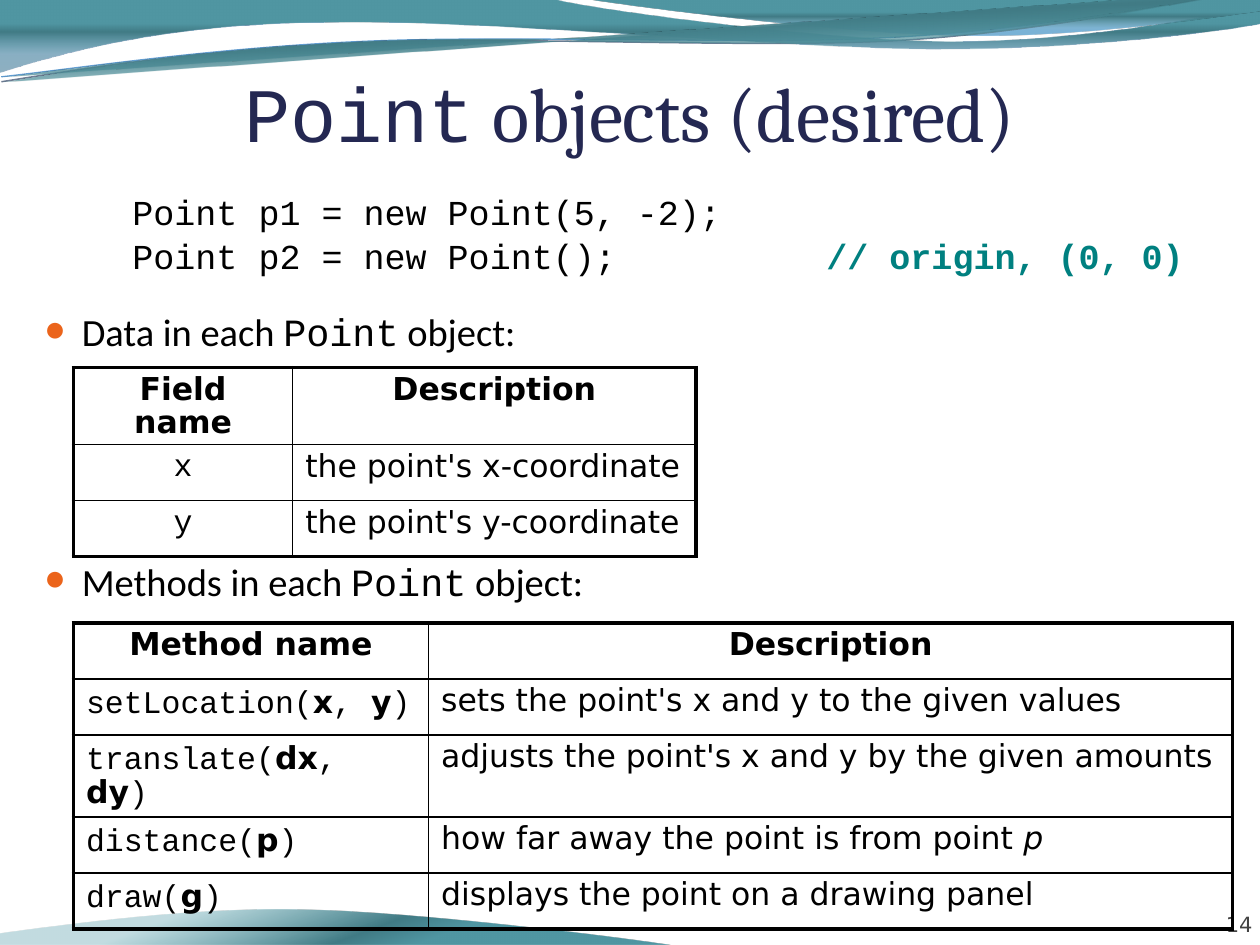
from lxml import etree
from pptx import Presentation
from pptx.dml.color import RGBColor
from pptx.enum.text import MSO_ANCHOR, PP_ALIGN
from pptx.oxml.ns import qn
from pptx.util import Cm, Pt

LEFT, CENTER, RIGHT = PP_ALIGN.LEFT, PP_ALIGN.CENTER, PP_ALIGN.RIGHT
TOP, BOTTOM = MSO_ANCHOR.TOP, MSO_ANCHOR.BOTTOM

C = {"ink": "000000", "title": "242852", "comment": "008080", "number": "424242",
     "bullet": "EB641B", "ribbon_a": "707E95", "ribbon_b": "629DD1"}
MONO, SANS, BODY, HEAD = "Courier New", "DejaVu Sans", "Calibri", "Cambria"

# Gradient stops: position %, colour, opacity %
TEAL = [(33, "5096A2", 100), (44, "417B85", 100), (74, "5AA2AE", 37)]
BLUE_BAND = [(0, "125EAA", 45), (100, "697FA4", 55)]
BLUE_SWOOSH = [(0, "596982", 30), (80, "0670DA", 45)]

# Outlines in cm from the box corner: 2 numbers are a line, 6 a Bézier curve
BAND = [(0, 0), (11.18, 0), (12.09, 0.23, 16.87, 0.84, 19.25, 0.84),
        (21.67, 0.84, 24.33, 0.36, 25.4, 0.13), (25.43, 0.48),
        (24.97, 0.58, 22.1, 0.99, 18.95, 0.99),
        (15.75, 0.99, 9.7, 0.38, 6.53, 0.46),
        (3.28, 0.48, 1.17, 1.09, -0.03, 1.47)]
SWOOSH = [(0, 0), (0.79, 0.13, 5.26, 0.69, 7.52, 0.71),
          (9.78, 0.76, 12.55, 0.36, 13.54, 0.23), (13.54, 0)]
RIBBON_A = [(0, 0.64), (1.25, 0.5, 4.06, 0.17, 7.09, 0.19),
            (10.12, 0.18, 15.05, 0.69, 18.13, 0.66),
            (21.18, 0.62, 23.92, 0.12, 25.43, 0)]
RIBBON_B = [(0, 0.54), (1.22, 0.47, 4.22, 0.16, 7.24, 0.17),
            (10.26, 0.17, 15.15, 0.62, 18.18, 0.59),
            (21.23, 0.55, 23.92, 0.09, 25.43, 0)]


def rgb(name):
    return RGBColor.from_string(C[name])


def sub(parent, tag, **attrs):
    el = etree.SubElement(parent, qn(tag))
    for key, value in attrs.items():
        el.set(key, str(value))
    return el


def add_text(p, text, size=18, font=SANS, color="ink", bold=False, italic=False):
    r = p.add_run()
    r.text = text
    f = r.font
    f.size, f.name, f.bold, f.italic = Pt(size), font, bold, italic
    f.color.rgb = rgb(color)


def add_box(s, left, top, width, height, anchor=TOP, margins=(0.25, 0.13, 0.25, 0.13)):
    tf = s.shapes.add_textbox(Cm(left), Cm(top), Cm(width), Cm(height)).text_frame
    tf.word_wrap, tf.vertical_anchor = True, anchor
    tf.margin_left, tf.margin_top, tf.margin_right, tf.margin_bottom = map(Cm, margins)
    return tf


def bend(sp, outline):
    """Merge the three line segments of each curve into one Bézier segment."""
    lines = iter(list(sp._element.iter(qn("a:lnTo"))))
    for seg in outline[1:]:
        first = next(lines)
        if len(seg) == 6:
            first.tag = qn("a:cubicBezTo")
            for extra in (next(lines), next(lines)):
                first.append(extra[0])
                extra.getparent().remove(extra)


def add_wave(s, left, top, outline, stops=None, angle=90, line=None, width=0.75,
             rotation=0, close=True):
    points = [(Cm(left + seg[i]), Cm(top + seg[i + 1]))
              for seg in outline for i in range(0, len(seg), 2)]
    fb = s.shapes.build_freeform(*points[0], scale=1.0)
    fb.add_line_segments(points[1:], close=close)
    sp = fb.convert_to_shape()
    # A tag cannot change the element's class, so the curves are set on raw XML
    bend(sp, outline)
    sp.shadow.inherit = False
    sp.rotation = rotation
    if stops:
        sp.fill.gradient()
        sp.fill.gradient_angle = 360 - angle
        gs_list = sp._element.find(".//" + qn("a:gsLst"))
        for gs in list(gs_list):
            gs_list.remove(gs)
        for pos, color, alpha in stops:
            gs = sub(gs_list, "a:gs", pos=pos * 1000)
            sub(sub(gs, "a:srgbClr", val=color), "a:alpha", val=alpha * 1000)
        sp.line.fill.background()
    else:
        sp.fill.background()
        sp.line.color.rgb = rgb(line)
        sp.line.width = Pt(width)


def add_waves(s, left, top, width, height):
    """Waves along the top and bottom edges of the box."""
    swoosh_left, ribbon_top = left + width - 13.54, top + 0.41
    ribbon = {"rotation": 357.3, "close": False}
    add_wave(s, left, top, BAND, BLUE_BAND)
    add_wave(s, swoosh_left, top, SWOOSH, BLUE_SWOOSH)
    add_wave(s, left, ribbon_top, RIBBON_A, line="ribbon_a", width=0.85, **ribbon)
    add_wave(s, left, ribbon_top, RIBBON_B, line="ribbon_b", **ribbon)
    add_wave(s, left, top, BAND, TEAL)
    add_wave(s, swoosh_left, top, SWOOSH, TEAL)
    for outline in (RIBBON_A, RIBBON_B):
        add_wave(s, left, ribbon_top, outline, TEAL, **ribbon)
    add_wave(s, left - 0.03, top + height - 0.76, SWOOSH, TEAL, angle=70, rotation=180)


def add_title(s, left, top, width, height):
    p = add_box(s, left, top, width, height, BOTTOM, (0, 0.13, 0, 0)).paragraphs[0]
    p.alignment = CENTER
    add_text(p, "Point", 44, MONO, "title")
    add_text(p, " objects (desired)", 44, HEAD, "title")


def add_number(s, left, top, width, height):
    p = add_box(s, left, top, width, height, BOTTOM, (0, 0, 0, 0)).paragraphs[0]
    p.alignment = RIGHT
    add_text(p, "14", 12, color="number")


def add_code(s, left, top, width, height):
    tf = add_box(s, left, top, width, height)
    first, second = tf.paragraphs[0], tf.add_paragraph()
    # Tab stop that lines up the comment
    sub(sub(second._p.get_or_add_pPr(), "a:tabLst"), "a:tab", pos=Cm(13.99), algn="l")
    first.line_spacing = second.line_spacing = 0.9
    second.space_before = Pt(3.6)
    add_text(first, "Point p1 = new Point(5, -2);", 20, MONO)
    add_text(second, "Point p2 = new Point();\t", 20, MONO)
    add_text(second, "// origin, (0, 0)", 20, MONO, "comment", bold=True)


def add_bullets(s, left, top, width, height):
    tf = add_box(s, left, top, width, height)
    for i, word in enumerate(("Data", "Methods")):
        p = tf.add_paragraph() if i else tf.paragraphs[0]
        pPr = p._p.get_or_add_pPr()
        pPr.set("marL", str(Cm(0.76)))
        pPr.set("indent", str(Cm(-0.76)))
        sub(sub(pPr, "a:buClr"), "a:srgbClr", val=C["bullet"])
        sub(pPr, "a:buSzPct", val=95000)
        sub(pPr, "a:buFont", typeface=MONO)
        sub(pPr, "a:buChar", char="●")
        if i:
            p.space_before = Pt(116)  # room for the field table
        add_text(p, f"{word} in each ", 22, BODY)
        add_text(p, "Point", 22, MONO)
        add_text(p, " object:", 22, BODY)


def set_borders(cell, outer):
    tcPr = cell._tc.get_or_add_tcPr()
    for side in "LRTB":
        ln = sub(tcPr, f"a:ln{side}", w=Pt(2.25 if side in outer else 1))
        sub(sub(ln, "a:solidFill"), "a:srgbClr", val=C["ink"])


def add_grid(s, left, top, widths, heights, rows, first_align=LEFT, margin_bottom=0.13):
    """Table whose cells are lists of (text, format) runs."""
    table = s.shapes.add_table(len(rows), len(widths), Cm(left), Cm(top),
                               Cm(sum(widths)), Cm(sum(heights))).table
    table.first_row = table.horz_banding = False
    for col, w in zip(table.columns, widths):
        col.width = Cm(w)
    for i, (row, h) in enumerate(zip(rows, heights)):
        table.rows[i].height = Cm(h)
        for j, runs in enumerate(row):
            cell = table.cell(i, j)
            edges = {"T": i == 0, "B": i == len(rows) - 1,
                     "L": j == 0, "R": j == len(widths) - 1}
            set_borders(cell, [side for side, on in edges.items() if on])
            cell.fill.background()
            cell.margin_bottom = Cm(margin_bottom)
            p = cell.text_frame.paragraphs[0]
            p.alignment = CENTER if i == 0 else first_align if j == 0 else LEFT
            p.line_spacing = 0.9
            for text, fmt in runs:
                add_text(p, text, **fmt)


def header(*names):
    return [[(name, {"bold": True})] for name in names]


def signature(name, *params):
    runs = [(f"{name}(", {"font": MONO})]
    for i, param in enumerate(params):
        if i:
            runs.append((", ", {"font": MONO}))
        runs.append((param, {"bold": True}))
    return runs + [(")", {"font": MONO})]


def add_field_table(s, left, top):
    rows = [header("Field name", "Description")]
    rows += [[[(f, {"font": MONO})], [(f"the point's {f}-coordinate", {})]] for f in "xy"]
    add_grid(s, left, top, (4.42, 8.13), [1.13] * 3, rows, CENTER, margin_bottom=0.05)


def add_method_table(s, left, top):
    rows = [header("Method name", "Description"),
            [signature("setLocation", "x", "y"),
             [("sets the point's x and y to the given values", {})]],
            [signature("translate", "dx", "dy"),
             [("adjusts the point's x and y by the given amounts", {})]],
            [signature("distance", "p"),
             [("how far away the point is from point ", {}), ("p", {"italic": True})]],
            [signature("draw", "g"), [("displays the point on a drawing panel", {})]]]
    add_grid(s, left, top, (7.16, 16.21), (1.13, 1.13, 1.65, 1.13, 1.13), rows)


def main():
    prs = Presentation()
    prs.slide_width, prs.slide_height = Cm(25.4), Cm(19.05)
    s = prs.slides.add_slide(prs.slide_layouts[6])
    add_waves(s, 0, 0, 25.4, 19.05)
    add_number(s, 23.14, 17.86, 2.11, 1.02)
    add_title(s, 1.27, 1.22, 22.86, 1.96)
    add_code(s, 2.42, 3.8, 22.6, 2)
    add_bullets(s, 0.64, 6.09, 24.76, 6.4)
    add_method_table(s, 1.48, 12.56)
    add_field_table(s, 1.48, 7.41)
    prs.save("out.pptx")


if __name__ == "__main__":
    main()
